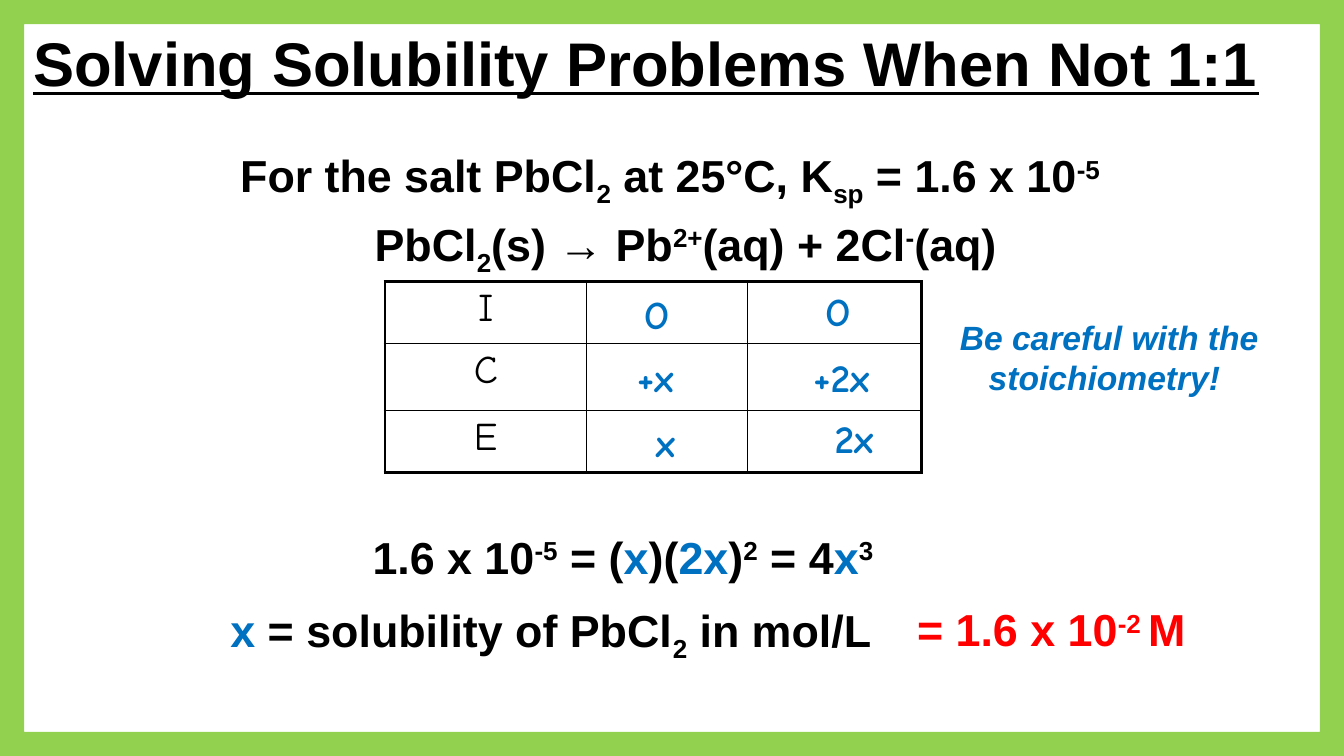
from itertools import product

from lxml.etree import SubElement
from pptx import Presentation
from pptx.dml.color import RGBColor as RGB
from pptx.enum.shapes import MSO_SHAPE as Shape
from pptx.enum.text import MSO_ANCHOR as Anchor, MSO_AUTO_SIZE as Fit, PP_ALIGN as Align
from pptx.oxml.ns import qn
from pptx.util import Pt


class Theme:
    black = RGB(0, 0, 0)
    blue = RGB(0x00, 0x70, 0xC0)
    red = RGB(0xFF, 0, 0)
    green = RGB(0x92, 0xD0, 0x50)
    sans, hand = "Arial", "Comic Neue"
    title, body, entry, note = Pt(44), Pt(32), Pt(28), Pt(24)
    thick, thin = Pt(2.25), Pt(1)


def style(para, name, size, color, bold=True):
    font = para.font
    font.name, font.size, font.bold = name, size, bold
    font.color.rgb = color


def write(left, top, width, height, text, color=Theme.black,
          name=Theme.sans, size=Theme.body, wrap=True):
    """Add a text box; "|" splits runs, which "_" lowers, "^" raises and "*" turns blue."""
    box = slide.shapes.add_textbox(Pt(left), Pt(top), Pt(width), Pt(height))
    frame = box.text_frame
    frame.word_wrap = wrap
    frame.auto_size = Fit.SHAPE_TO_FIT_TEXT
    para = frame.paragraphs[0]
    style(para, name, size, color)
    for part in text.split("|"):
        mark = part[0] if part[0] in "_^*" else ""
        run = para.add_run()
        run.text = part[len(mark):]
        if mark == "*":
            run.font.color.rgb = Theme.blue
        elif mark:
            shift = "-25000" if mark == "_" else "30000"
            run._r.get_or_add_rPr().set("baseline", shift)
    return para


deck = Presentation()
deck.slide_width, deck.slide_height = Pt(960), Pt(540)
slide = deck.slides.add_slide(deck.slide_layouts[5])

# Border and title
edge = slide.shapes.add_shape(Shape.FRAME, 0, 0, deck.slide_width, deck.slide_height)
edge.adjustments[0] = 0.032
edge.shadow.inherit = False
edge.fill.solid()
edge.fill.fore_color.rgb = Theme.green
edge.line.fill.background()

title = slide.shapes.title
title.left, title.top, title.width, title.height = Pt(16.5), Pt(15), Pt(914), Pt(58.5)
frame = title.text_frame
frame.text = "Solving Solubility Problems When Not 1:1"
frame.vertical_anchor = Anchor.MIDDLE
frame.auto_size = Fit.NONE
head = frame.paragraphs[0]
head.alignment = Align.LEFT
style(head, Theme.sans, Theme.title, Theme.black)
head.font.underline = True

# Problem and reaction
write(164.5, 102, 736, 46, "For the salt PbCl|_2| at 25°C, K|_sp| = 1.6 x 10|^-5")
write(260.5, 151, 595, 46, "PbCl|_2|(s) → Pb|^2+|(aq) + 2Cl|^-|(aq)")

# ICE table
wide, high = (144, 115, 124.5), (44.5, 47.5, 44.5)
grid = slide.shapes.add_table(3, 3, Pt(275), Pt(201), Pt(sum(wide)), Pt(sum(high))).table
grid.first_row = grid.horz_banding = False
for col, width in zip(grid.columns, wide):
    col.width = Pt(width)
for row, height in zip(grid.rows, high):
    row.height = Pt(height)
for r, c in product(range(3), repeat=2):
    cell = grid.cell(r, c)
    outer = {"lnL": c == 0, "lnR": c == 2, "lnT": r == 0, "lnB": r == 2}
    for side, rim in outer.items():
        line = SubElement(cell._tc.get_or_add_tcPr(), qn(f"a:{side}"),
                          w=str(Theme.thick if rim else Theme.thin))
        paint = SubElement(line, qn("a:solidFill"))
        SubElement(paint, qn("a:srgbClr"), val=str(Theme.black))
    cell.fill.background()
    para = cell.text_frame.paragraphs[0]
    style(para, Theme.hand, Theme.entry, Theme.black, bold=False)
    if c == 0:
        para.text = "ICE"[r]
        para.alignment = Align.CENTER
        para.space_before = Pt(5.6)

# Handwritten entries
entries = [
    (453, 204, 37, "O"), (582.5, 201.5, 37, "O"),
    (448, 248.5, 48, "+x"), (574, 248.5, 65.5, "+2x"),
    (461.5, 295, 31, "x"), (589, 292.5, 48, "2x"),
]
for left, top, width, text in entries:
    write(left, top, width, 41, text, Theme.blue, Theme.hand, Theme.entry, wrap=False)

note = write(673, 222.5, 238.5, 65.5, "Be careful with the stoichiometry! ",
             Theme.blue, size=Theme.note)
note.alignment = Align.CENTER
note.font.italic = True

# Solution
write(259, 374.5, 475, 46, "1.6 x 10|^-5| = (|*x|)(|*2x|)|^2| = 4|*x|^3")
write(157.5, 427, 482, 46, "*x| = solubility of PbCl|_2| in mol/L")
write(648, 426.5, 211, 46, "= 1.6 x 10|^-2 |M", Theme.red, wrap=False)

deck.save("out.pptx")
